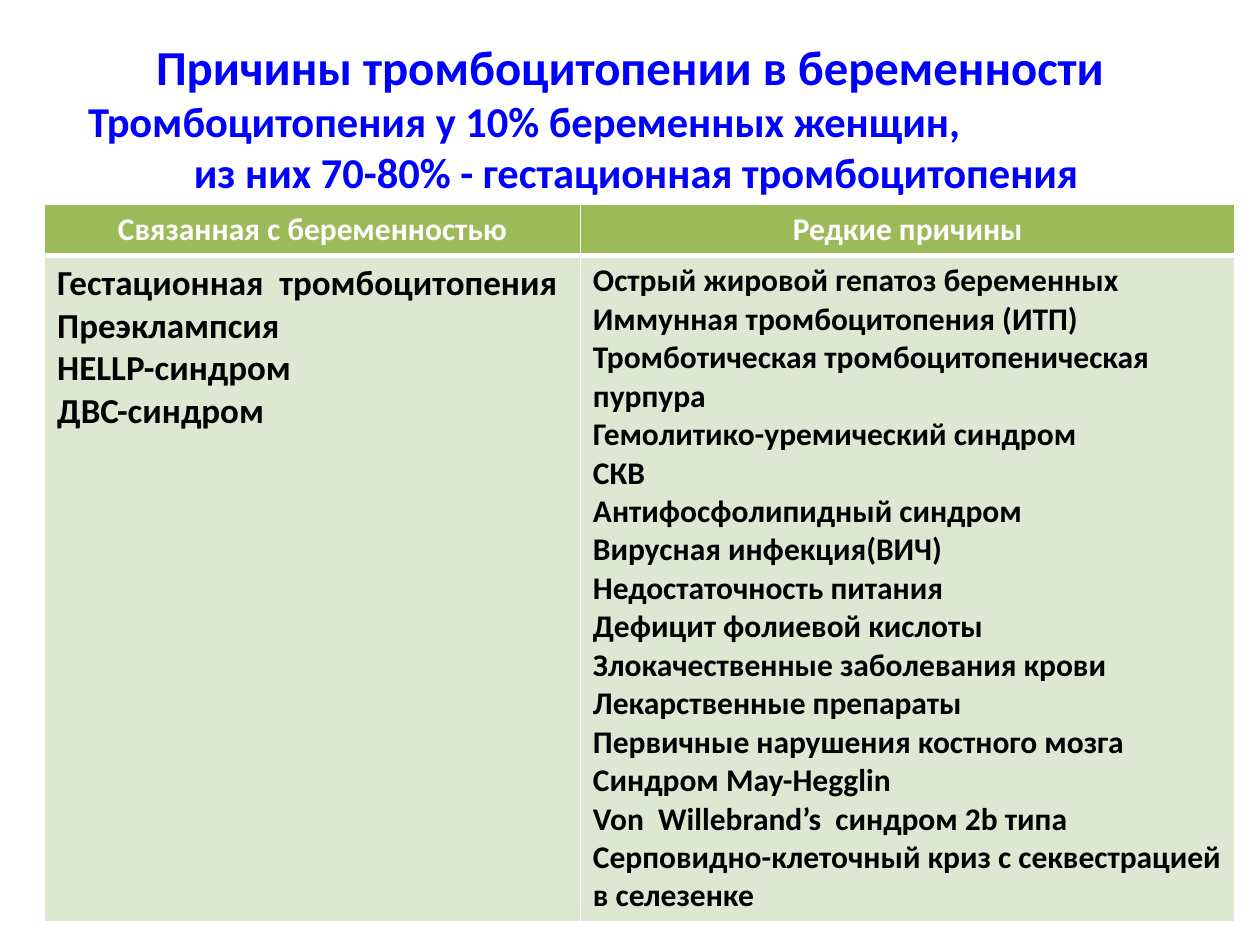
from dataclasses import dataclass

from lxml import etree
from pptx import Presentation
from pptx import util as u
from pptx.dml.color import RGBColor
from pptx.enum import text
from pptx.oxml import ns


@dataclass(frozen=True)
class Theme:
    font: str = "Calibri"
    title: str = "0000FF"
    header: str = "9BBB59"
    body: str = "DEE7D1"
    light: str = "FFFFFF"
    dark: str = "000000"
    title_size: float = 27.9
    subtitle_size: float = 24.3
    large_size: float = 20
    normal_size: float = 18
    thin_line: float = 1
    thick_line: float = 3


@dataclass(frozen=True)
class Box:
    left: float
    top: float
    width: float
    height: float

    def lengths(self):
        return [u.Cm(n) for n in (self.left, self.top, self.width, self.height)]


THEME = Theme()
LEFT, CENTER = text.PP_ALIGN.LEFT, text.PP_ALIGN.CENTER

HEADINGS = ["Связанная с беременностью", "Редкие причины"]
PREGNANCY_CAUSES = [
    "Гестационная  тромбоцитопения",
    "Преэклампсия",
    "HELLP-синдром",
    "ДВС-синдром",
]
RARE_CAUSES = [
    "Острый жировой гепатоз беременных",
    "Иммунная тромбоцитопения (ИТП)",
    "Тромботическая тромбоцитопеническая пурпура",
    "Гемолитико-уремический синдром",
    "СКВ",
    "Антифосфолипидный синдром",
    "Вирусная инфекция(ВИЧ)",
    "Недостаточность питания",
    "Дефицит фолиевой кислоты",
    "Злокачественные заболевания крови",
    "Лекарственные препараты",
    "Первичные нарушения костного мозга",
    "Синдром May-Hegglin",
    "Von  Willebrand’s  синдром 2b типа",
    "Серповидно-клеточный криз с секвестрацией в селезенке",
]


def write(para, words, *, size, color, align=LEFT, indent=0):
    para.alignment = align
    if indent:
        para._p.get_or_add_pPr().set("marL", str(u.Cm(indent)))
    span = para.add_run()
    span.text = words
    span.font.name = THEME.font
    span.font.size = u.Pt(size)
    span.font.bold = True
    span.font.color.rgb = RGBColor.from_string(color)


def write_lines(frame, lines, **style):
    for index, words in enumerate(lines):
        para = frame.add_paragraph() if index else frame.paragraphs[0]
        write(para, words, **style)


def set_borders(cell, *, top, bottom):
    props = cell._tc.get_or_add_tcPr()
    widths = {"lnL": THEME.thin_line, "lnR": THEME.thin_line, "lnT": top, "lnB": bottom}
    for index, (side, width) in enumerate(widths.items()):
        line = etree.Element(ns.qn(f"a:{side}"), w=str(u.Pt(width)))
        fill = etree.SubElement(line, ns.qn("a:solidFill"))
        etree.SubElement(fill, ns.qn("a:srgbClr"), val=THEME.light)
        props.insert(index, line)


def fill_cell(cell, lines, *, fill, top, bottom, **style):
    cell.fill.solid()
    cell.fill.fore_color.rgb = RGBColor.from_string(fill)
    set_borders(cell, top=top, bottom=bottom)
    write_lines(cell.text_frame, lines, **style)


def place_title(page, box):
    title = page.shapes.title
    title.left, title.top, title.width, title.height = box.lengths()
    frame = title.text_frame
    frame.word_wrap = True
    frame.auto_size = text.MSO_AUTO_SIZE.NONE
    frame.vertical_anchor = text.MSO_ANCHOR.MIDDLE
    write(frame.paragraphs[0], "Причины тромбоцитопении в беременности",
          size=THEME.title_size, color=THEME.title, align=CENTER)
    write(frame.add_paragraph(), "Тромбоцитопения у 10% беременных женщин,",
          size=THEME.subtitle_size, color=THEME.title, indent=0.25)
    write(frame.add_paragraph(), "из них 70-80% - гестационная тромбоцитопения",
          size=THEME.subtitle_size, color=THEME.title, align=CENTER)


def place_causes(page, box):
    table = page.shapes.add_table(2, 2, *box.lengths()).table
    table.horz_banding = False
    header_height, first_width = 1.03, 10.8
    table.rows[0].height = u.Cm(header_height)
    table.rows[1].height = u.Cm(box.height - header_height)
    table.columns[0].width = u.Cm(first_width)
    table.columns[1].width = u.Cm(box.width - first_width)

    columns = zip(HEADINGS, (PREGNANCY_CAUSES, RARE_CAUSES),
                  (THEME.large_size, THEME.normal_size))
    for index, (heading, causes, size) in enumerate(columns):
        fill_cell(table.cell(0, index), [heading], fill=THEME.header,
                  top=THEME.thin_line, bottom=THEME.thick_line,
                  size=THEME.normal_size, color=THEME.light, align=CENTER)
        fill_cell(table.cell(1, index), causes, fill=THEME.body,
                  top=THEME.thick_line, bottom=THEME.thin_line,
                  size=size, color=THEME.dark)


def main():
    deck = Presentation()
    deck.slide_width, deck.slide_height = u.Cm(25.4), u.Cm(19.05)
    page = deck.slides.add_slide(deck.slide_layouts.get_by_name("Title Only"))
    place_title(page, Box(1.27, 0.76, 22.86, 3.18))
    place_causes(page, Box(0.9, 4.12, 24, 14.25))
    deck.save("out.pptx")


if __name__ == "__main__":
    main()
